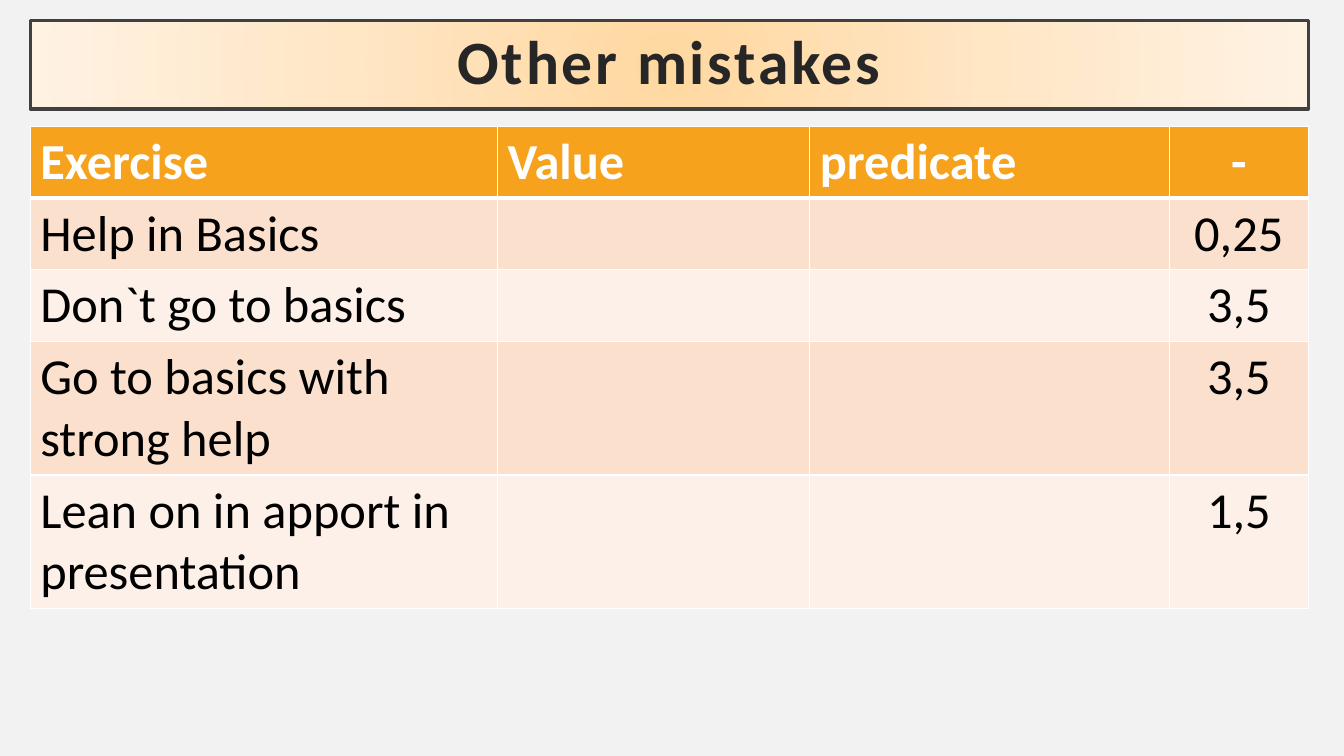
import dataclasses

import lxml.etree
import pptx
import pptx.dml.color
import pptx.enum.text
import pptx.oxml.ns
import pptx.util

WIDE, HIGH = pptx.util.Inches(13.33), pptx.util.Inches(7.5)
ALIGN = pptx.enum.text.PP_ALIGN
LEFT, SPAN = 0.0225, 0.951  # shares of the slide's width
TOP, BAND = 0.027, 0.117  # title, shares of the slide's height
GRID_TOP, LINE, PAD = 0.167, 0.0814, 0.0133
COLS = (4.64, 3.1, 3.57, 1.38)  # relative column widths

HEAD = ("Exercise", "Value", "predicate", "-")
ROWS = (
    ("Help in Basics", "", "", "0,25", 1),
    ("Don`t go to basics", "", "", "3,5", 1),
    ("Go to basics with strong help", "", "", "3,5", 2),
    ("Lean on in apport in presentation", "", "", "1,5", 2),
)


@dataclasses.dataclass(frozen=True)
class Theme:
    font: str = "Calibri"
    title: int = 44
    body: int = 36
    back: str = "F2F2F2"
    ink: str = "262626"
    frame: str = "404040"
    glow: tuple = ("FFD8A0", "FFE6C5", "FFF2E3")
    head: str = "F6A21D"
    bands: tuple = ("FBE0CD", "FDF0E8")
    white: str = "FFFFFF"
    black: str = "000000"


THEME = Theme()


def rgb(code):
    return pptx.dml.color.RGBColor.from_string(code)


def paint(fill, code):
    fill.solid()
    fill.fore_color.rgb = rgb(code)


def node(base, tag, **attrs):
    return lxml.etree.SubElement(base, pptx.oxml.ns.qn(tag), attrs)


def write(para, text, size, color, bold):
    run = para.add_run()
    run.text = text
    run.font.name = THEME.font
    run.font.size = pptx.util.Pt(size)
    run.font.bold = bold
    run.font.color.rgb = rgb(color)
    return run


def glow(shape):
    """Fill a shape with a gradient that spreads from its centre."""
    shape.fill.gradient()
    grad = shape.element.spPr.find(pptx.oxml.ns.qn("a:gradFill"))
    for child in list(grad):
        grad.remove(child)
    stops = node(grad, "a:gsLst")
    for step, code in enumerate(THEME.glow):
        stop = node(stops, "a:gs", pos=str(step * 50000))
        node(stop, "a:srgbClr", val=code)
    ring = node(grad, "a:path", path="circle")
    node(ring, "a:fillToRect", **dict.fromkeys("ltrb", "50000"))


def add_title(slide, text):
    title = slide.shapes.title
    title.left, title.top = int(LEFT * WIDE), int(TOP * HIGH)
    title.width, title.height = int(SPAN * WIDE), int(BAND * HIGH)
    glow(title)
    title.line.color.rgb = rgb(THEME.frame)
    title.line.width = pptx.util.Pt(2.5)
    frame = title.text_frame
    frame.word_wrap = True
    frame.auto_size = pptx.enum.text.MSO_AUTO_SIZE.NONE
    frame.vertical_anchor = pptx.enum.text.MSO_ANCHOR.MIDDLE
    inset = pptx.util.Inches(0.2)
    frame.margin_left = frame.margin_right = inset
    frame.margin_top = frame.margin_bottom = inset
    para = frame.paragraphs[0]
    para.alignment = ALIGN.CENTER
    para.line_spacing = 0.9
    run = write(para, text, THEME.title, THEME.ink, True)
    run.font._element.set("spc", "200")


def edge(cell, base):
    """Draw white borders; base is the width of the lower one in points."""
    props = cell._tc.get_or_add_tcPr()
    for spot, side in enumerate("LRTB"):
        width = pptx.util.Pt(base if side == "B" else 1)
        line = node(props, f"a:ln{side}", w=str(width))
        node(node(line, "a:solidFill"), "a:srgbClr", val=THEME.white)
        props.insert(spot, line)


def add_cell(cell, text, fill, color, bold, align, base):
    paint(cell.fill, fill)
    edge(cell, base)
    if text:
        para = cell.text_frame.paragraphs[0]
        para.alignment = align
        write(para, text, THEME.body, color, bold)


def add_grid(slide):
    lines = [1] + [row[-1] for row in ROWS]
    highs = [int((count * LINE + PAD) * HIGH) for count in lines]
    table = slide.shapes.add_table(
        len(lines), len(COLS), int(LEFT * WIDE), int(GRID_TOP * HIGH),
        int(SPAN * WIDE), sum(highs)).table
    for col, share in zip(table.columns, COLS):
        col.width = int(SPAN * WIDE * share / sum(COLS))
    for row, high in zip(table.rows, highs):
        row.height = high
    for y, texts in enumerate([HEAD] + [row[:-1] for row in ROWS]):
        top = y == 0
        fill = THEME.head if top else THEME.bands[(y - 1) % 2]
        color = THEME.white if top else THEME.black
        for x, text in enumerate(texts):
            align = ALIGN.CENTER if x == len(COLS) - 1 else ALIGN.LEFT
            add_cell(table.cell(y, x), text, fill, color, top, align,
                     3 if top else 1)


def main():
    deck = pptx.Presentation()
    deck.slide_width, deck.slide_height = WIDE, HIGH
    slide = deck.slides.add_slide(deck.slide_layouts[5])
    paint(slide.background.fill, THEME.back)
    add_title(slide, "Other mistakes")
    add_grid(slide)
    deck.save("out.pptx")


if __name__ == "__main__":
    main()
